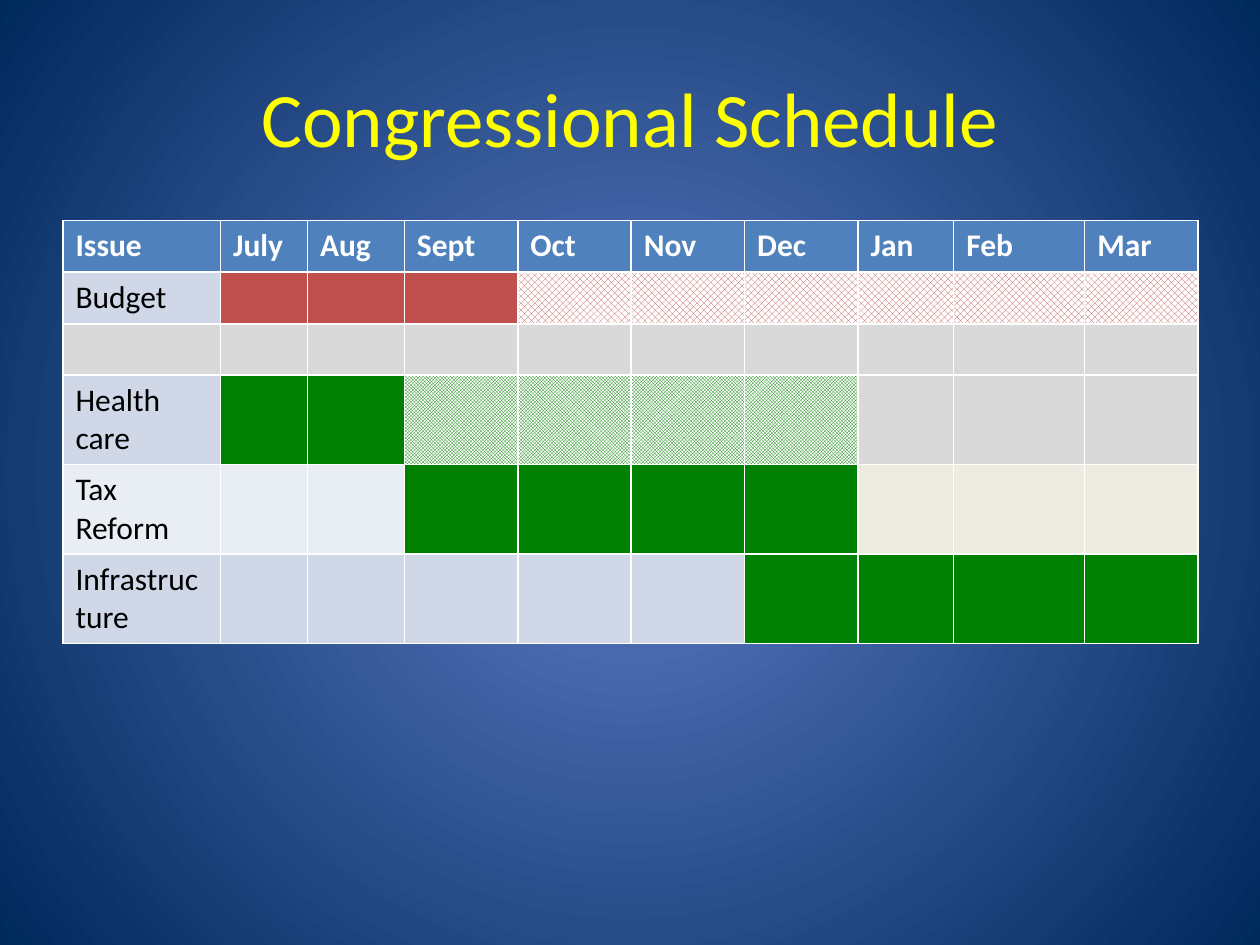
from dataclasses import dataclass

from lxml import etree
from pptx import Presentation
from pptx import util as u
from pptx.dml import color
from pptx.enum import dml, text
from pptx.oxml import ns

WIDTH, HEIGHT = u.Inches(10), u.Inches(7.5)
FONT = "Calibri"
MONTHS = ["July", "Aug", "Sept", "Oct", "Nov", "Dec", "Jan", "Feb", "Mar"]
COLUMN_SHARES = [0.125, 0.069, 0.077, 0.09, 0.09, 0.09, 0.09, 0.076, 0.104, 0.09]
ROW_HEIGHT, SPACER_HEIGHT = u.Inches(0.41), u.Inches(0.22)
BLUE, BAND, LIGHT_BAND = "4F81BD", "D0D8E8", "E9EDF4"
RED, GREEN, GRAY, TAN, WHITE = "C0504D", "008000", "D9D9D9", "EEECE1", "FFFFFF"


@dataclass
class Span:
    """A run of equally filled months; a pattern is drawn on white."""
    months: int
    fill: str
    pattern: dml.MSO_PATTERN | None = None


@dataclass
class Issue:
    name: str
    label_fill: str
    spans: list[Span]


ISSUES = [
    Issue("Budget", BAND, [Span(3, RED), Span(6, RED, dml.MSO_PATTERN.LARGE_CHECKER_BOARD)]),
    Issue("", GRAY, [Span(9, GRAY)]),
    Issue("Health care", BAND, [
        Span(2, GREEN), Span(4, GREEN, dml.MSO_PATTERN.SMALL_CHECKER_BOARD), Span(3, GRAY)]),
    Issue("Tax Reform", LIGHT_BAND, [Span(2, LIGHT_BAND), Span(4, GREEN), Span(3, TAN)]),
    Issue("Infrastructure", BAND, [Span(5, BAND), Span(4, GREEN)]),
]


def rgb(value: str) -> color.RGBColor:
    return color.RGBColor.from_string(value)


def format_font(font, fill: str, **values) -> None:
    for name, value in {"name": FONT, **values}.items():
        setattr(font, name, value)
    font.color.rgb = rgb(fill)


def fill_cell(cell, span: Span) -> None:
    if span.pattern is None:
        cell.fill.solid()
        cell.fill.fore_color.rgb = rgb(span.fill)
        return
    cell.fill.patterned()
    cell.fill.pattern = span.pattern
    cell.fill.fore_color.rgb = rgb(span.fill)
    cell.fill.back_color.rgb = rgb(WHITE)


def write_cell(cell, words: str, fill: str, bold: bool = False) -> None:
    cell.text = words
    format_font(cell.text_frame.paragraphs[0].font, fill, size=u.Pt(18), bold=bold)


def add_radial_background(slide, center: str, edge: str) -> None:
    fill = slide.background.fill
    fill.gradient()
    for stop, value in zip(fill.gradient_stops, (center, edge)):
        stop.color.rgb = rgb(value)
    gradient = slide.element.find(".//" + ns.qn("a:gradFill"))
    gradient.remove(gradient.find(ns.qn("a:lin")))
    circle = etree.SubElement(gradient, ns.qn("a:path"), {"path": "circle"})
    etree.SubElement(circle, ns.qn("a:fillToRect"), dict.fromkeys("ltrb", "50000"))


def add_title(slide, words: str) -> None:
    title = slide.shapes.title
    box = {"left": 0.05, "top": 0.04, "width": 0.9, "height": 1 / 6}
    for name, share in box.items():
        setattr(title, name, int(share * (WIDTH if name in ("left", "width") else HEIGHT)))
    title.text_frame.text = words
    title.text_frame.vertical_anchor = text.MSO_ANCHOR.MIDDLE
    paragraph = title.text_frame.paragraphs[0]
    paragraph.alignment = text.PP_ALIGN.CENTER
    format_font(paragraph.font, "FFFF00", size=u.Pt(44))


def add_schedule(slide) -> None:
    heights = [ROW_HEIGHT] + [ROW_HEIGHT if issue.name else SPACER_HEIGHT for issue in ISSUES]
    table = slide.shapes.add_table(
        len(heights), len(COLUMN_SHARES), int(0.05 * WIDTH), u.Inches(1.75),
        int(0.9 * WIDTH), sum(heights)).table
    for column, share in zip(table.columns, COLUMN_SHARES):
        column.width = int(share * WIDTH)
    for row, height in zip(table.rows, heights):
        row.height = height

    for column, heading in enumerate(["Issue", *MONTHS]):
        cell = table.cell(0, column)
        fill_cell(cell, Span(1, BLUE))
        write_cell(cell, heading, WHITE, bold=True)

    for row, issue in enumerate(ISSUES, start=1):
        if issue.name:
            write_cell(table.cell(row, 0), issue.name, "000000")
        column = 0
        for span in [Span(1, issue.label_fill), *issue.spans]:
            for _ in range(span.months):
                fill_cell(table.cell(row, column), span)
                column += 1


def main() -> None:
    presentation = Presentation()
    presentation.slide_width, presentation.slide_height = WIDTH, HEIGHT
    slide = presentation.slides.add_slide(presentation.slide_layouts.get_by_name("Title Only"))
    add_radial_background(slide, "5E7CC5", "00295C")
    add_title(slide, "Congressional Schedule")
    add_schedule(slide)
    presentation.save("out.pptx")


if __name__ == "__main__":
    main()
